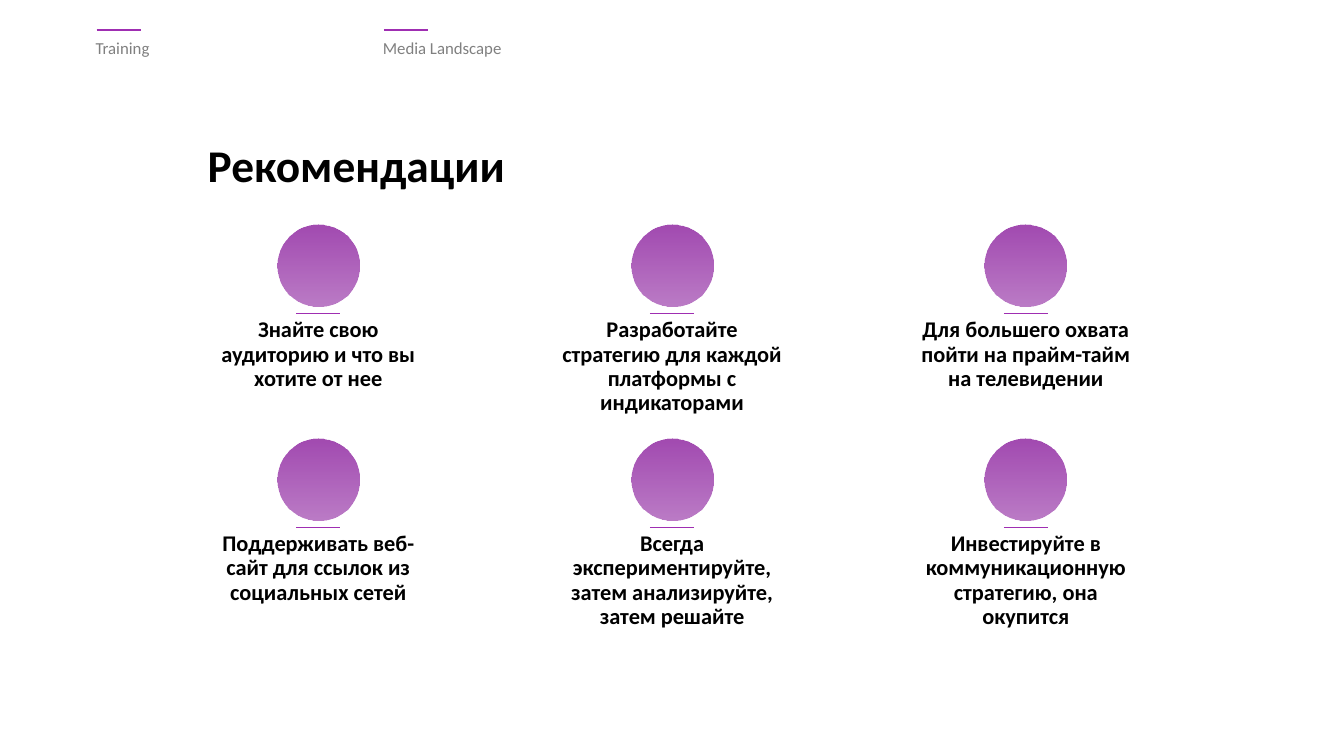
import dataclasses

import pptx
import pptx.dml.color
import pptx.enum.shapes
import pptx.enum.text
import pptx.oxml.ns
import pptx.util
from lxml import etree

Pt = pptx.util.Pt
Align = pptx.enum.text.PP_ALIGN
Anchor = pptx.enum.text.MSO_ANCHOR
qn = pptx.oxml.ns.qn


@dataclasses.dataclass
class Theme:
    font: str = "Calibri"
    ink: str = "000000"
    muted: str = "808080"
    rule: str = "9F2EB2"
    disc: str = "A24AB1"
    disc_end_alpha: int = 72
    title_size: float = 32.4
    caption_size: float = 16
    header_size: float = 12
    rule_width: float = 1.25
    rule_length: float = 31.6
    line_spacing: float = 0.9


class SlideBuilder:
    def __init__(self, slide, theme):
        self.slide = slide
        self.theme = theme

    def color(self, name):
        return pptx.dml.color.RGBColor.from_string(name)

    def set_text(self, shape, text, size, color, bold=False, align=Align.LEFT, anchor=Anchor.TOP):
        frame = shape.text_frame
        frame.word_wrap = True
        frame.auto_size = pptx.enum.text.MSO_AUTO_SIZE.NONE
        frame.vertical_anchor = anchor
        frame.text = text
        paragraph = frame.paragraphs[0]
        paragraph.alignment = align
        paragraph.line_spacing = self.theme.line_spacing
        paragraph.font.name = self.theme.font
        paragraph.font.size = Pt(size)
        paragraph.font.bold = bold
        paragraph.font.color.rgb = self.color(color)

    def title(self, text, left, top, width, height):
        shape = self.slide.shapes.title
        shape.left, shape.top, shape.width, shape.height = map(Pt, (left, top, width, height))
        self.set_text(shape, text, self.theme.title_size, self.theme.ink, bold=True,
                      anchor=Anchor.MIDDLE)

    def text(self, text, left, top, width, height, size, color, **style):
        shape = self.slide.shapes.add_textbox(Pt(left), Pt(top), Pt(width), Pt(height))
        self.set_text(shape, text, size, color, **style)

    def rule(self, left, top):
        line = self.slide.shapes.add_connector(
            pptx.enum.shapes.MSO_CONNECTOR.STRAIGHT,
            Pt(left), Pt(top), Pt(left + self.theme.rule_length), Pt(top))
        line.line.color.rgb = self.color(self.theme.rule)
        line.line.width = Pt(self.theme.rule_width)
        etree.SubElement(line._element.spPr, qn("a:effectLst"))

    def disc(self, left, top, diameter):
        shape = self.slide.shapes.add_shape(
            pptx.enum.shapes.MSO_SHAPE.OVAL, Pt(left), Pt(top), Pt(diameter), Pt(diameter))
        shape.shadow.inherit = False
        shape.line.fill.background()
        # Vertical gradient that fades towards the bottom
        shape.fill.gradient()
        shape.fill.gradient_angle = 270
        for stop in shape.fill.gradient_stops:
            stop.color.rgb = self.color(self.theme.disc)
        last_color = shape._element.spPr.findall(".//" + qn("a:srgbClr"))[-1]
        etree.SubElement(last_color, qn("a:alpha"), val=str(self.theme.disc_end_alpha * 1000))


HEADERS = [("Training", 61.2), ("Media Landscape", 266.4)]
RECOMMENDATIONS = [
    "Знайте свою аудиторию и что вы хотите от нее",
    "Разработайте стратегию для каждой платформы с индикаторами",
    "Для большего охвата пойти на прайм-тайм на телевидении",
    "Поддерживать веб-сайт для ссылок из социальных сетей",
    "Всегда экспериментируйте, затем анализируйте, затем решайте",
    "Инвестируйте в коммуникационную стратегию, она окупится",
]
COLUMNS = 3
FIRST_CENTER, COLUMN_PITCH = 227.4, 252.7
FIRST_TOP, ROW_PITCH = 160.6, 152.8
DISC_SIZE, RULE_OFFSET = 58.4, 63.4
CAPTION_WIDTH, CAPTION_HEIGHT = 175.7, 18.7


def main():
    presentation = pptx.Presentation()
    presentation.slide_width, presentation.slide_height = Pt(960), Pt(540)
    theme = Theme()
    builder = SlideBuilder(presentation.slides.add_slide(presentation.slide_layouts[5]), theme)

    # Header labels
    for label, left in HEADERS:
        builder.rule(left + 7.9, 21.6)
        builder.text(label, left, 25.2, 182.2, 40.3, theme.header_size, theme.muted,
                     align=Align.JUSTIFY)

    # Title
    builder.title("Рекомендации", 141.1, 97.9, 347.8, 43.9)

    # Grid of recommendations
    for index, recommendation in enumerate(RECOMMENDATIONS):
        row, column = divmod(index, COLUMNS)
        center = FIRST_CENTER + column * COLUMN_PITCH
        top = FIRST_TOP + row * ROW_PITCH
        rule_top = top + RULE_OFFSET
        builder.disc(center - DISC_SIZE / 2, top, DISC_SIZE)
        builder.rule(center - theme.rule_length / 2, rule_top)
        builder.text(recommendation, center - CAPTION_WIDTH / 2, rule_top,
                     CAPTION_WIDTH, CAPTION_HEIGHT, theme.caption_size, theme.ink,
                     bold=True, align=Align.CENTER)

    presentation.save("out.pptx")


if __name__ == "__main__":
    main()
